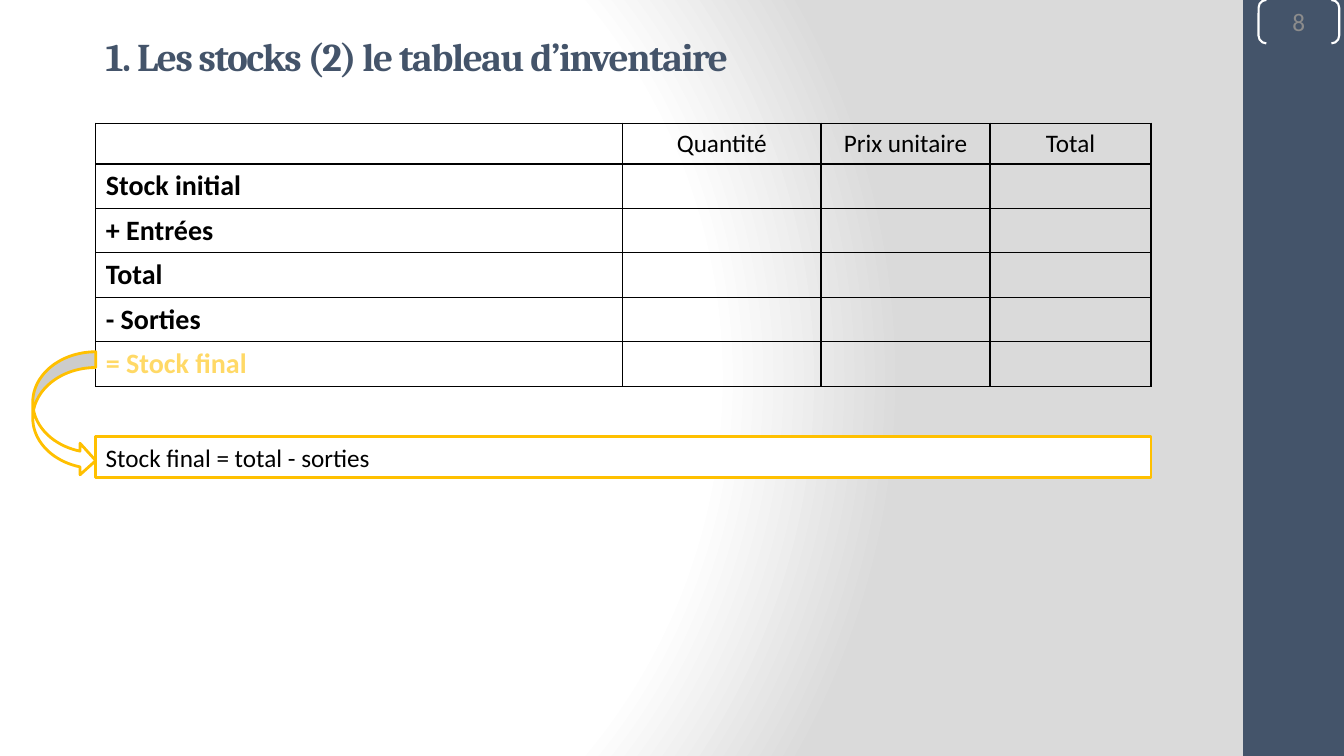
"""Build the slide on the inventory table for stocks."""
import pptx
import pptx.dml.color
import pptx.enum.shapes
import pptx.enum.text
import pptx.oxml
import pptx.oxml.ns
import pptx.util

Pt = pptx.util.Pt
RGBColor = pptx.dml.color.RGBColor
SHAPE = pptx.enum.shapes.MSO_SHAPE
ALIGN = pptx.enum.text.PP_ALIGN
MIDDLE = pptx.enum.text.MSO_ANCHOR.MIDDLE

SLATE = RGBColor(0x44, 0x54, 0x6A)
WHITE = RGBColor(0xFF, 0xFF, 0xFF)
BLACK = RGBColor(0x00, 0x00, 0x00)
GREY = RGBColor(0x8C, 0x8C, 0x8C)
GOLD = RGBColor(0xFF, 0xC0, 0x00)
PALE_GOLD = RGBColor(0xFF, 0xD9, 0x66)
NAMESPACE = pptx.oxml.ns.nsdecls("a")
LEFT, WIDTH = 68.4, 753.8


def write_text(frame, text, size=18, color=BLACK, bold=False, font="Calibri",
               align=ALIGN.LEFT, spacing=None):
    paragraph = frame.paragraphs[0]
    paragraph.alignment = align
    run = paragraph.add_run()
    run.text = text
    run.font.size = Pt(size)
    run.font.name = font
    run.font.bold = bold
    run.font.color.rgb = color
    if spacing is not None:
        run.font._element.set("spc", str(spacing))


def add_shape(kind, left, top, width, height, fill=None, line=None, weight=2):
    shape = slide.shapes.add_shape(kind, Pt(left), Pt(top), Pt(width), Pt(height))
    shape.shadow.inherit = False
    for part, color in ((shape.fill, fill), (shape.line.fill, line)):
        if color is None:
            part.background()
        else:
            part.solid()
            part.fore_color.rgb = color
    if line is not None:
        shape.line.width = Pt(weight)
    shape.text_frame.word_wrap = True
    shape.text_frame.vertical_anchor = MIDDLE
    return shape


presentation = pptx.Presentation()
presentation.slide_width = Pt(960)
presentation.slide_height = Pt(540)
slide = presentation.slides.add_slide(presentation.slide_layouts[6])

slide.background.fill.solid()
solid_fill = slide.background._cSld.bg.bgPr[0]
stops = "".join(
    f'<a:gs pos="{position}"><a:srgbClr val="{color}"/></a:gs>'
    for position, color in ((0, "FFFFFF"), (75000, "FFFFFF"), (100000, "DADADA")))
gradient = pptx.oxml.parse_xml(
    f'<a:gradFill {NAMESPACE} rotWithShape="1"><a:gsLst>{stops}</a:gsLst>'
    '<a:path path="circle"><a:fillToRect l="20000" t="50000" r="100000" b="50000"/>'
    '</a:path></a:gradFill>')
solid_fill.getparent().replace(solid_fill, gradient)

add_shape(SHAPE.RECTANGLE, 888, 0, 72, 540, fill=SLATE)
page_number = add_shape(SHAPE.DOUBLE_BRACKET, 899, 0, 57.6, 31, line=WHITE, weight=1.5)
page_number.adjustments[0] = 0.179
number_frame = page_number.text_frame
number_frame.margin_left = number_frame.margin_right = 0
number_frame.margin_top = number_frame.margin_bottom = 0
write_text(number_frame, "8", color=GREY, align=ALIGN.CENTER)

headings = ["", "Quantité", "Prix unitaire", "Total"]
labels = ["Stock initial", "+ Entrées", "Total", "- Sorties", "= Stock final"]
column_widths = [376.3, 141.8, 120.7, 115]
row_heights = [28.6] + [31.3] * len(labels)
table = slide.shapes.add_table(len(row_heights), len(headings), Pt(LEFT), Pt(88),
                               Pt(WIDTH), Pt(sum(row_heights))).table
table.first_row = False
table.horz_banding = False
for column, width in zip(table.columns, column_widths):
    column.width = Pt(width)
for row, height in zip(table.rows, row_heights):
    row.height = Pt(height)
for cell in table.iter_cells():
    properties = cell._tc.get_or_add_tcPr()
    for side in ("lnL", "lnR", "lnT", "lnB"):
        properties.append(pptx.oxml.parse_xml(
            f'<a:{side} {NAMESPACE} w="12700"><a:solidFill>'
            f'<a:srgbClr val="{BLACK}"/></a:solidFill></a:{side}>'))
    cell.fill.background()
for index, heading in enumerate(headings):
    if heading:
        write_text(table.cell(0, index).text_frame, heading, align=ALIGN.CENTER)
for index, label in enumerate(labels, start=1):
    color = PALE_GOLD if index == len(labels) else BLACK
    write_text(table.cell(index, 0).text_frame, label, size=20, bold=True, color=color)

add_shape(SHAPE.CURVED_RIGHT_ARROW, 23.4, 251.3, 45, 89, fill=WHITE, line=GOLD)
formula = add_shape(SHAPE.RECTANGLE, LEFT, 311.8, WIDTH, 29.1, fill=WHITE, line=GOLD)
write_text(formula.text_frame, "Stock final = total - sorties")

title = slide.shapes.add_textbox(Pt(LEFT), Pt(17.3), Pt(600), Pt(44.6))
title.text_frame.word_wrap = True
title.text_frame.vertical_anchor = MIDDLE
write_text(title.text_frame, "1. Les stocks (2) le tableau d’inventaire", size=28,
           color=SLATE, bold=True, font="Cambria", spacing=-100)

presentation.save("out.pptx")
